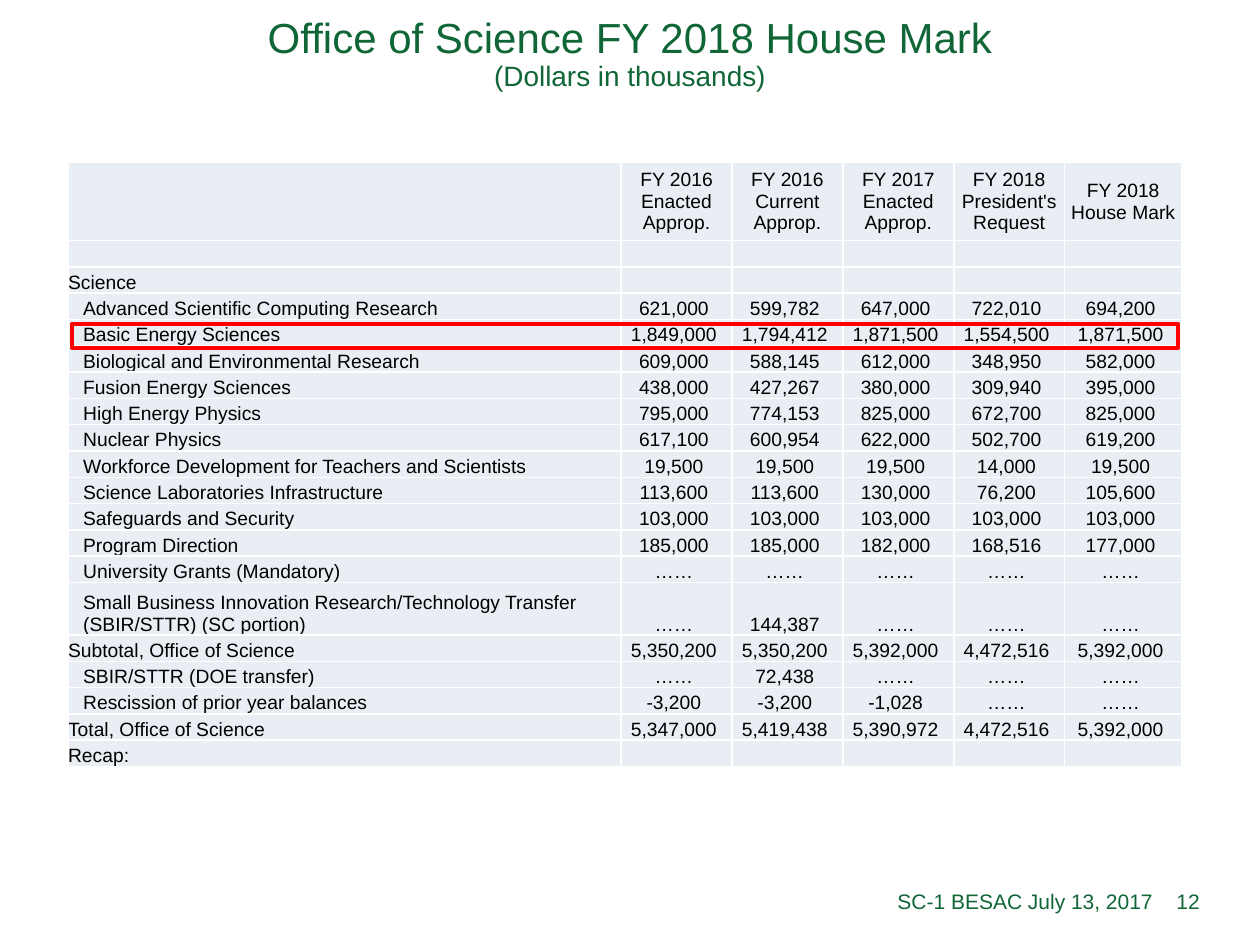
from dataclasses import dataclass

from lxml import etree
from pptx import Presentation
from pptx.dml.color import RGBColor
from pptx.enum.shapes import MSO_SHAPE
from pptx.enum.text import MSO_ANCHOR, PP_ALIGN
from pptx.oxml.ns import qn
from pptx.util import Inches, Pt

LEFT, CENTER, RIGHT = PP_ALIGN.LEFT, PP_ALIGN.CENTER, PP_ALIGN.RIGHT
MIDDLE, BOTTOM = MSO_ANCHOR.MIDDLE, MSO_ANCHOR.BOTTOM
RECTANGLE = MSO_SHAPE.RECTANGLE


@dataclass(frozen=True)
class Theme:
    font: str = "Arial"
    green: str = "106636"
    black: str = "000000"
    cell: str = "E9EDF4"
    border: str = "FFFFFF"
    highlight: str = "FF0000"
    title_size: int = 24
    subtitle_size: int = 16
    footer_size: int = 12
    table_size: int = 11


THEME = Theme()

HEADINGS = ["", "FY 2016 Enacted Approp.", "FY 2016 Current Approp.",
            "FY 2017 Enacted Approp.", "FY 2018 President's Request",
            "FY 2018 House Mark"]
NONE = "……"

# Label, indented or not, and the amount for each budget column
BUDGET = [
    ("", False, []),
    ("Science", False, []),
    ("Advanced Scientific Computing Research", True,
     ["621,000", "599,782", "647,000", "722,010", "694,200"]),
    ("Basic Energy Sciences", True,
     ["1,849,000", "1,794,412", "1,871,500", "1,554,500", "1,871,500"]),
    ("Biological and Environmental Research", True,
     ["609,000", "588,145", "612,000", "348,950", "582,000"]),
    ("Fusion Energy Sciences", True,
     ["438,000", "427,267", "380,000", "309,940", "395,000"]),
    ("High Energy Physics", True,
     ["795,000", "774,153", "825,000", "672,700", "825,000"]),
    ("Nuclear Physics", True,
     ["617,100", "600,954", "622,000", "502,700", "619,200"]),
    ("Workforce Development for Teachers and Scientists", True,
     ["19,500", "19,500", "19,500", "14,000", "19,500"]),
    ("Science Laboratories Infrastructure", True,
     ["113,600", "113,600", "130,000", "76,200", "105,600"]),
    ("Safeguards and Security", True, ["103,000"] * 5),
    ("Program Direction", True,
     ["185,000", "185,000", "182,000", "168,516", "177,000"]),
    ("University Grants (Mandatory)", True, [NONE] * 5),
    ("Small Business Innovation Research/Technology Transfer "
     "(SBIR/STTR) (SC portion)", True, [NONE, "144,387", NONE, NONE, NONE]),
    ("Subtotal, Office of Science", False,
     ["5,350,200", "5,350,200", "5,392,000", "4,472,516", "5,392,000"]),
    ("SBIR/STTR (DOE transfer)", True, [NONE, "72,438", NONE, NONE, NONE]),
    ("Rescission of prior year balances", True,
     ["-3,200", "-3,200", "-1,028", NONE, NONE]),
    ("Total, Office of Science", False,
     ["5,347,000", "5,419,438", "5,390,972", "4,472,516", "5,392,000"]),
    ("Recap:", False, []),
]

COLUMN_WIDTHS = [4.39, 0.88, 0.88, 0.88, 0.88, 0.93]
TABLE_HEIGHT, HEADER_HEIGHT = 4.8, 0.62
TWO_LINE_ROW = 14
INDENT = 0.12


def style_font(font, size, color):
    font.name = THEME.font
    font.size = Pt(size)
    font.color.rgb = RGBColor.from_string(color)


def add_text_box(slide, left, top, width, height, align):
    frame = slide.shapes.add_textbox(
        Inches(left), Inches(top), Inches(width), Inches(height)).text_frame
    frame.word_wrap = True
    frame.vertical_anchor = MIDDLE
    paragraph = frame.paragraphs[0]
    paragraph.alignment = align
    return paragraph


def add_title(slide, title, subtitle):
    paragraph = add_text_box(slide, 0, -0.19, 10, 1.25, CENTER)
    paragraph.line_spacing = 0.9
    title_run = paragraph.add_run()
    title_run.text = title
    style_font(title_run.font, THEME.title_size, THEME.green)
    paragraph.add_line_break()
    subtitle_run = paragraph.add_run()
    subtitle_run.text = subtitle
    style_font(subtitle_run.font, THEME.subtitle_size, THEME.green)


def add_footer(slide, text, left, width):
    paragraph = add_text_box(slide, left, 6.95, width, 0.4, RIGHT)
    paragraph.text = text
    style_font(paragraph.font, THEME.footer_size, THEME.green)


def add_borders(cell):
    properties = cell._tc.get_or_add_tcPr()
    for side in ("a:lnL", "a:lnR", "a:lnT", "a:lnB"):
        line = etree.SubElement(properties, qn(side), w=str(Pt(1)))
        fill = etree.SubElement(line, qn("a:solidFill"))
        etree.SubElement(fill, qn("a:srgbClr"), val=THEME.border)


def fill_cell(cell, text, align, anchor, indent=0):
    add_borders(cell)
    cell.fill.solid()
    cell.fill.fore_color.rgb = RGBColor.from_string(THEME.cell)
    cell.margin_left = Inches(indent)
    cell.margin_right = cell.margin_top = cell.margin_bottom = 0
    cell.vertical_anchor = anchor
    paragraph = cell.text_frame.paragraphs[0]
    paragraph.alignment = align
    style_font(paragraph.font, THEME.table_size, THEME.black)
    if text:
        paragraph.text = text
    else:
        # Keeps an empty cell from stretching its row
        etree.SubElement(paragraph._p, qn("a:endParaRPr"),
                         sz=str(THEME.table_size * 100))


def add_budget_table(slide):
    table = slide.shapes.add_table(
        len(BUDGET) + 1, len(HEADINGS), Inches(0.54), Inches(1.29),
        Inches(sum(COLUMN_WIDTHS)), Inches(TABLE_HEIGHT)).table
    table.first_row = table.horz_banding = False

    # The two-line row counts as two ordinary rows
    row_height = (TABLE_HEIGHT - HEADER_HEIGHT) / (len(BUDGET) + 1)
    for column, width in zip(table.columns, COLUMN_WIDTHS):
        column.width = Inches(width)
    for row in table.rows:
        row.height = Inches(row_height)
    table.rows[0].height = Inches(HEADER_HEIGHT)
    table.rows[TWO_LINE_ROW].height = Inches(2 * row_height)

    for column, heading in enumerate(HEADINGS):
        fill_cell(table.cell(0, column), heading, CENTER, MIDDLE)
    for row, (label, indented, amounts) in enumerate(BUDGET, 1):
        fill_cell(table.cell(row, 0), label, LEFT, BOTTOM,
                  INDENT if indented else 0)
        for column in range(1, len(HEADINGS)):
            amount = f"{amounts[column - 1]} " if amounts else ""
            fill_cell(table.cell(row, column), amount, CENTER, BOTTOM)


def add_highlight(slide):
    highlight = slide.shapes.add_shape(
        RECTANGLE, Inches(0.57), Inches(2.57), Inches(8.78), Inches(0.19))
    highlight.shadow.inherit = False
    highlight.fill.background()
    highlight.line.color.rgb = RGBColor.from_string(THEME.highlight)
    highlight.line.width = Pt(2)


def main():
    deck = Presentation()
    deck.slide_width, deck.slide_height = Inches(10), Inches(7.5)
    slide = deck.slides.add_slide(deck.slide_layouts[6])

    # Page number, title and footer
    add_footer(slide, "12", 9.2, 0.42)
    add_title(slide, "Office of Science FY 2018 House Mark",
              "(Dollars in thousands)")
    add_footer(slide, "SC-1 BESAC July 13, 2017", 3.42, 5.83)

    # Budget table with the Basic Energy Sciences row marked
    add_budget_table(slide)
    add_highlight(slide)

    deck.save("out.pptx")


if __name__ == "__main__":
    main()
